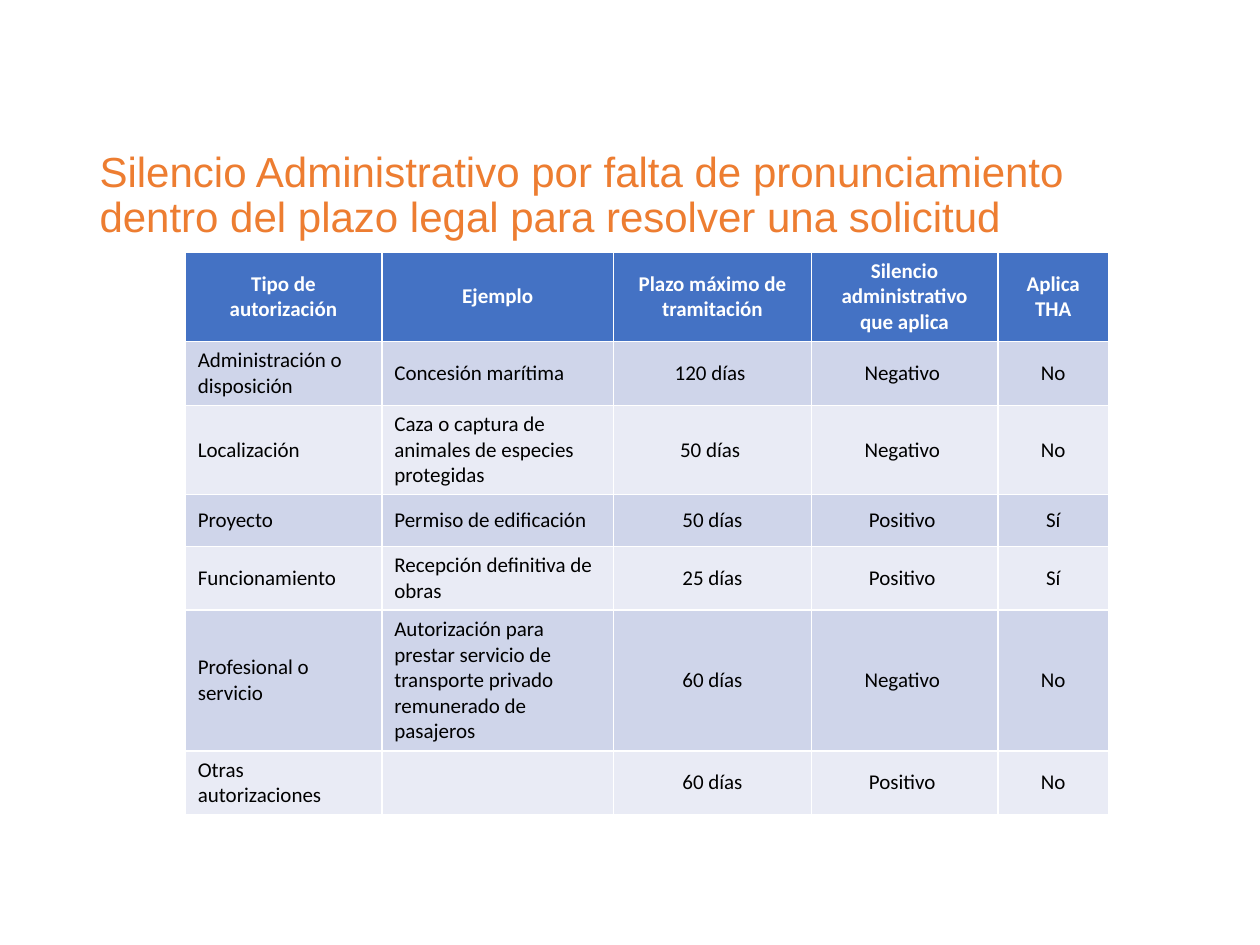
from typing import NamedTuple

from pptx import Presentation
from pptx.dml.color import RGBColor
from pptx.enum.text import MSO_ANCHOR, MSO_AUTO_SIZE, PP_ALIGN
from pptx.util import Inches, Pt

LEFT, CENTER = PP_ALIGN.LEFT, PP_ALIGN.CENTER
MIDDLE = MSO_ANCHOR.MIDDLE
NO_AUTOFIT = MSO_AUTO_SIZE.NONE
TITLE_ONLY = 5

COLORS = {
    "title": "ED7D31",
    "header": "4472C4",
    "header_text": "FFFFFF",
    "text": "000000",
    "band_dark": "CFD5EA",
    "band_light": "E9EBF5",
}
ROW_HEIGHT = 0.41


class Column(NamedTuple):
    heading: str
    width: float
    align: PP_ALIGN


class Permit(NamedTuple):
    kind: str
    example: str
    term: str
    silence: str
    tha: str


COLUMNS = [
    Column("Tipo de autorización", 1.56, LEFT),
    Column("Ejemplo", 1.84, LEFT),
    Column("Plazo máximo de tramitación", 1.57, CENTER),
    Column("Silencio administrativo que aplica", 1.48, CENTER),
    Column("Aplica THA", 0.88, CENTER),
]
PERMITS = [
    Permit("Administración o disposición", "Concesión marítima",
           "120 días ", "Negativo ", "No"),
    Permit("Localización", "Caza o captura de animales de especies protegidas",
           "50 días ", "Negativo ", "No"),
    Permit("Proyecto", "Permiso de edificación", "50 días", "Positivo ", "Sí"),
    Permit("Funcionamiento", "Recepción definitiva de obras",
           "25 días", "Positivo ", "Sí"),
    Permit("Profesional o servicio",
           "Autorización para prestar servicio de transporte privado "
           "remunerado de pasajeros", "60 días", "Negativo ", "No"),
    Permit("Otras autorizaciones", "", "60 días", "Positivo ", "No"),
]


def rgb(name: str) -> RGBColor:
    return RGBColor.from_string(COLORS[name])


def style_font(p, face: str, size: int, color: str, bold: bool = False) -> None:
    p.font.name = face
    p.font.size = Pt(size)
    p.font.bold = bold
    p.font.color.rgb = rgb(color)


def fill_cell(cell, text: str, fill: str, color: str, align: PP_ALIGN,
              bold: bool = False) -> None:
    cell.fill.solid()
    cell.fill.fore_color.rgb = rgb(fill)
    cell.vertical_anchor = MIDDLE
    cell.text = text
    p = cell.text_frame.paragraphs[0]
    p.alignment = align
    style_font(p, "Calibri", 12, color, bold)


def add_title(s, text: str) -> None:
    sp = s.shapes.title
    sp.left, sp.top = Inches(0.69), Inches(1.19)
    sp.width, sp.height = Inches(8.62), Inches(0.74)
    tf = sp.text_frame
    tf.text = text
    tf.word_wrap = True
    tf.auto_size = NO_AUTOFIT
    tf.vertical_anchor = MIDDLE
    p = tf.paragraphs[0]
    p.alignment = LEFT
    p.line_spacing = 0.9
    style_font(p, "Arial", 24, "title")


def add_permit_table(s) -> None:
    rows = len(PERMITS) + 1
    width = sum(col.width for col in COLUMNS)
    table = s.shapes.add_table(rows, len(COLUMNS), Inches(1.47), Inches(2),
                               Inches(width), Inches(rows * ROW_HEIGHT)).table

    # Header row
    for c, col in enumerate(COLUMNS):
        table.columns[c].width = Inches(col.width)
        fill_cell(table.cell(0, c), col.heading, "header", "header_text",
                  CENTER, bold=True)

    # Banded body rows, which grow to fit their text
    for r, permit in enumerate(PERMITS, start=1):
        band = "band_dark" if r % 2 else "band_light"
        for c, (col, text) in enumerate(zip(COLUMNS, permit)):
            fill_cell(table.cell(r, c), text, band, "text", col.align)


def main() -> None:
    prs = Presentation()
    prs.slide_width, prs.slide_height = Inches(10), Inches(7.5)
    s = prs.slides.add_slide(prs.slide_layouts[TITLE_ONLY])
    add_title(s, "Silencio Administrativo por falta de pronunciamiento "
                 "dentro del plazo legal para resolver una solicitud")
    add_permit_table(s)
    prs.save("out.pptx")


if __name__ == "__main__":
    main()
